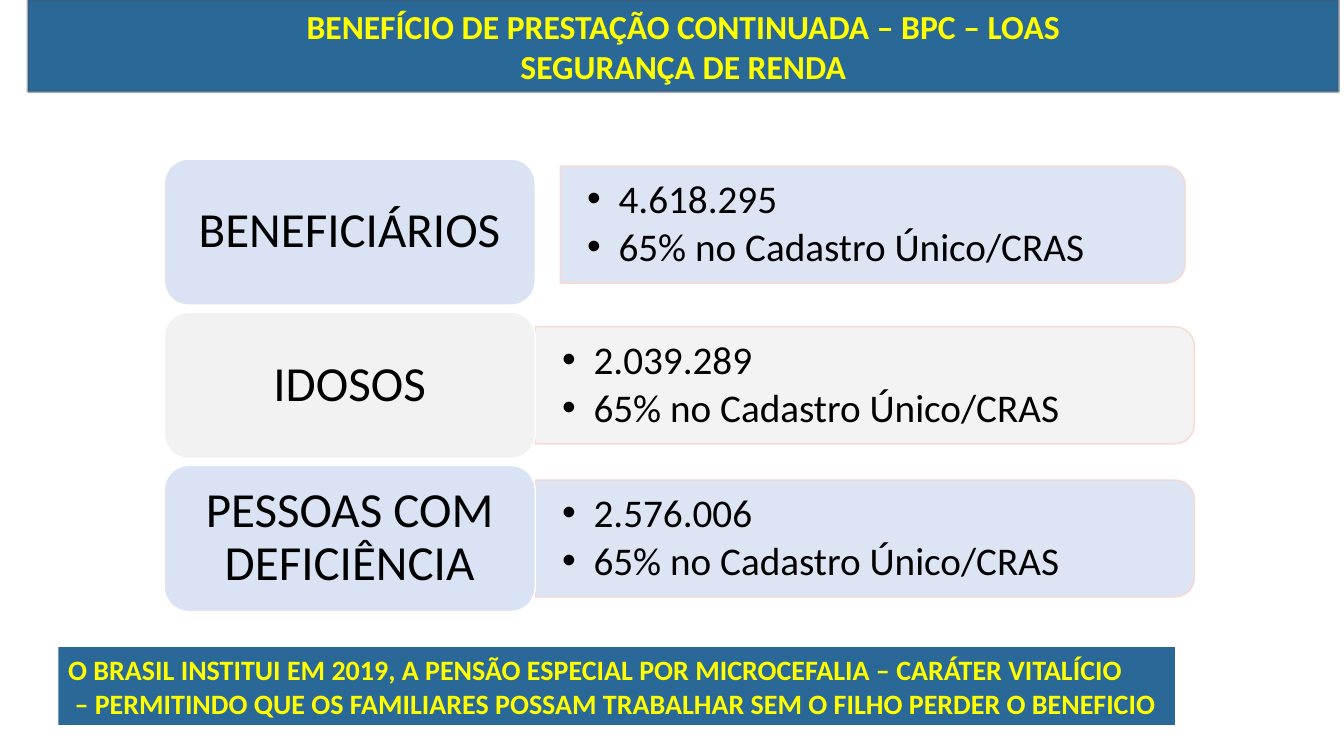
from lxml.etree import SubElement
from pptx import Presentation
from pptx.dml.color import RGBColor
from pptx.enum.shapes import MSO_SHAPE
from pptx.enum.text import MSO_ANCHOR, PP_ALIGN
from pptx.oxml.ns import qn
from pptx.util import Cm, Pt

BLUE = RGBColor(0x2A, 0x69, 0x97)
SLATE = RGBColor(0x44, 0x54, 0x6A)
YELLOW = RGBColor(0xFF, 0xFF, 0x00)
PALE = RGBColor(0xDA, 0xE3, 0xF3)
GRAY = RGBColor(0xF2, 0xF2, 0xF2)
PINK = RGBColor(0xF8, 0xD7, 0xCE)
WHITE = RGBColor(0xFF, 0xFF, 0xFF)
BLACK = RGBColor(0, 0, 0)

RIGHT = Cm(29.85)
SHARE = "65% no Cadastro Único/CRAS"
# label, count, colour, panel left, panel right, panel shift down
ROWS = [
    ("BENEFICIÁRIOS", "4.618.295", PALE, Cm(14.12), Cm(29.87), Cm(-0.19)),
    ("IDOSOS", "2.039.289", GRAY, Cm(13.49), Cm(30.1), Cm(0)),
    ("PESSOAS COM DEFICIÊNCIA", "2.576.006", PALE, Cm(13.49), Cm(30.1), Cm(0)),
]


def fade(fill, share):
    """Set the opacity of a solid fill, in percent."""
    color = fill._xPr.find(qn("a:solidFill"))[0]
    SubElement(color, qn("a:alpha")).set("val", str(share * 1000))


def draw(slide, kind, box, color, edge=None, width=1, solid=100):
    """Add a preset shape; solid is the opacity of its outline."""
    shape = slide.shapes.add_shape(kind, *box)
    shape.shadow.inherit = False
    shape.fill.solid()
    shape.fill.fore_color.rgb = color
    if edge is None:
        shape.line.fill.background()
    else:
        shape.line.color.rgb = edge
        shape.line.width = Pt(width)
        if solid < 100:
            fade(shape.line.fill, solid)
    return shape


def write(shape, lines, size, color, bold=False, align=PP_ALIGN.LEFT,
          wrap=True, pad=(Cm(0.25), Cm(0.13)), space=1, after=0, dots=False):
    frame = shape.text_frame
    frame.word_wrap = wrap
    frame.vertical_anchor = MSO_ANCHOR.MIDDLE
    frame.margin_left = frame.margin_right = pad[0]
    frame.margin_top = frame.margin_bottom = pad[1]
    for i, line in enumerate(lines):
        para = frame.paragraphs[0] if i == 0 else frame.add_paragraph()
        para.alignment = align
        para.line_spacing = space
        para.space_after = Pt(after)
        run = para.add_run()
        run.text = line
        font = run.font
        font.name, font.size, font.bold = "Calibri", Pt(size), bold
        font.color.rgb = color
        if dots:
            props = para._p.get_or_add_pPr()
            props.set("marL", str(Cm(0.79)))
            props.set("indent", str(Cm(-0.79)))
            SubElement(props, qn("a:buFont")).set("typeface", "Arial")
            SubElement(props, qn("a:buChar")).set("char", "•")


def banner(slide, box):
    bar = draw(slide, MSO_SHAPE.RECTANGLE, box, BLUE, SLATE, 2, 50)
    write(bar, ["BENEFÍCIO DE PRESTAÇÃO CONTINUADA – BPC – LOAS",
                "SEGURANÇA DE RENDA"],
          24, YELLOW, bold=True, align=PP_ALIGN.CENTER)


def panel(slide, box, lines, color):
    """Add a bulleted box whose right corners are rounded."""
    left, top, width, height = box
    turn = (width - height) // 2
    back = draw(slide, MSO_SHAPE.ROUND_2_SAME_RECTANGLE,
                (left + turn, top - turn, height, width),
                color, PINK, 1, 90)
    back.rotation = 90
    fade(back.fill, 90)
    text = slide.shapes.add_textbox(left, top, width - Cm(0.14), height)
    write(text, lines, 28, BLACK, pad=(Cm(0.68), Cm(0.36)),
          space=0.9, after=4, dots=True)


def table(slide, box):
    """Stack the rows, each a label with its panel."""
    left, top, width, height = box
    gap = Cm(0.18)
    tall = (height - gap * (len(ROWS) - 1)) // len(ROWS)
    deep = Cm(2.95)
    for i, (name, count, color, start, end, shift) in enumerate(ROWS):
        y = top + i * (tall + gap)
        panel(slide, (start, y + (tall - deep) // 2 + shift,
                      end - start, deep), [count, SHARE], color)
        label = draw(slide, MSO_SHAPE.ROUNDED_RECTANGLE,
                     (left, y, width, tall), color, WHITE)
        write(label, [name], 35, BLACK, align=PP_ALIGN.CENTER,
              pad=(Cm(0.38), Cm(0.18)), space=0.9)


def footer(slide, box):
    bar = draw(slide, MSO_SHAPE.RECTANGLE, box, BLUE)
    write(bar, ["O BRASIL INSTITUI EM 2019, A PENSÃO ESPECIAL POR "
                "MICROCEFALIA – CARÁTER VITALÍCIO",
                " – PERMITINDO QUE OS FAMILIARES POSSAM TRABALHAR SEM O "
                "FILHO PERDER O BENEFICIO"],
          20, YELLOW, bold=True, wrap=False)


def main():
    deck = Presentation()
    deck.slide_width, deck.slide_height = Cm(33.87), Cm(19.05)
    slide = deck.slides.add_slide(deck.slide_layouts[6])
    banner(slide, (Cm(0.71), Cm(0), Cm(33.02), Cm(2.31)))
    table(slide, (Cm(4.14), Cm(4.01), Cm(9.35), Cm(11.4)))
    footer(slide, (Cm(1.47), Cm(16.31), Cm(28.14), Cm(1.96)))
    deck.save("out.pptx")


if __name__ == "__main__":
    main()
